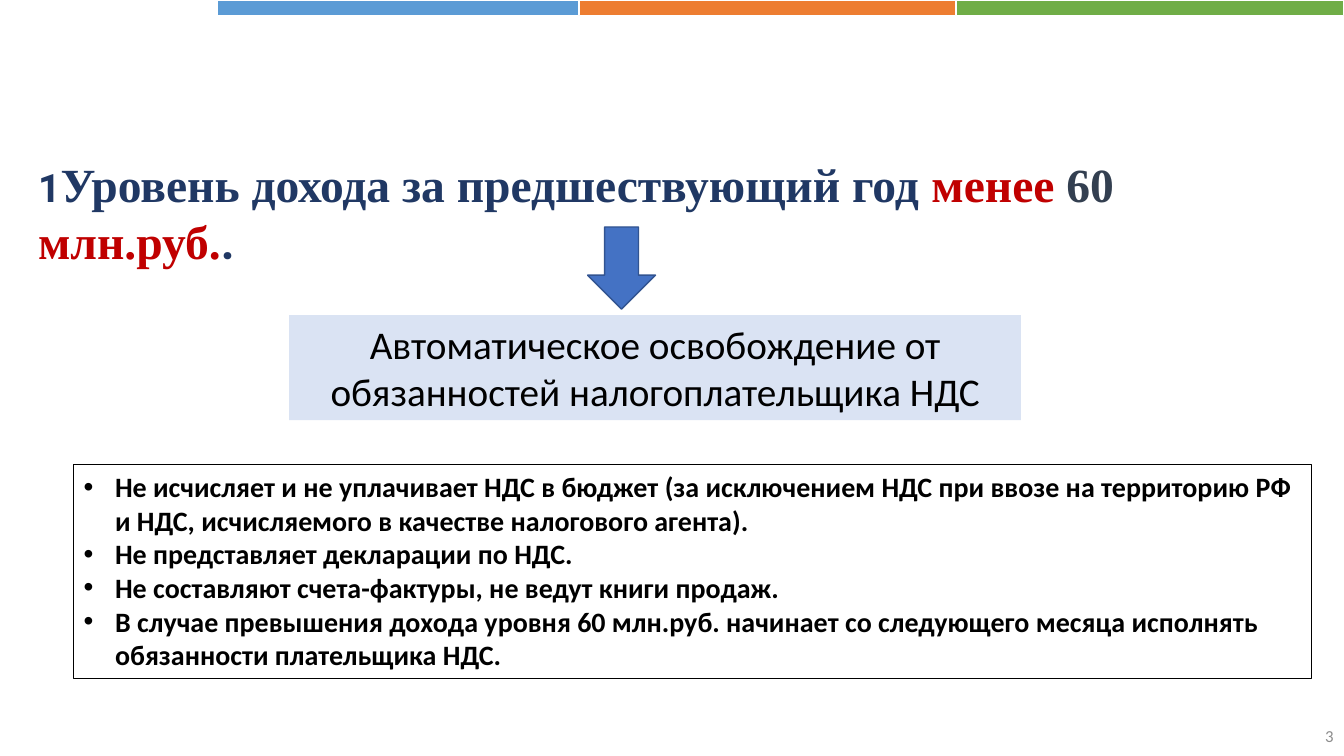
import pptx
import pptx.util
import pptx.dml.color
import pptx.enum.shapes
import pptx.enum.text
import lxml.etree

Cm = pptx.util.Cm
Pt = pptx.util.Pt
Kind = pptx.enum.shapes.MSO_SHAPE
Side = pptx.enum.text.PP_ALIGN
Mid = pptx.enum.text.MSO_ANCHOR


def tint(part, code):
    if hasattr(part, "solid"):
        part.solid()
        part = part.fore_color
    part.rgb = pptx.dml.color.RGBColor.from_string(code)


def write(para, text, size, face, code, bold=False):
    run = para.add_run()
    run.text = text
    run.font.size = Pt(size)
    run.font.name = face
    run.font.bold = bold
    tint(run.font.color, code)


deck = pptx.Presentation()
deck.slide_width = Cm(33.87)
deck.slide_height = Cm(19.05)
slide = deck.slides.add_slide(deck.slide_layouts[6])

shapes = {}
for name, kind, left, top, width, height, fill, edge, weight in [
    ("blue", Kind.RECTANGLE, 5.47, 0, 9.11, 0.4, "5B9BD5", "FFFFFF", 1),
    ("orange", Kind.RECTANGLE, 14.6, 0, 9.49, 0.4, "ED7D31", "FFFFFF", 1),
    ("green", Kind.RECTANGLE, 24.09, 0, 9.77, 0.4, "70AD47", "FFFFFF", 1),
    ("arrow", Kind.DOWN_ARROW, 14.81, 5.72, 1.71, 2.07, "4472C4", "325491", 1),
    ("result", Kind.RECTANGLE, 7.29, 7.94, 18.44, 2.65, "DAE3F3", None, 0),
    ("duties", Kind.RECTANGLE, 1.86, 11.71, 31.2, 5.39, None, "000000", 0.75),
]:
    shape = slide.shapes.add_shape(kind, Cm(left), Cm(top), Cm(width), Cm(height))
    shape.shadow.inherit = False
    if fill:
        tint(shape.fill, fill)
    else:
        shape.fill.background()
    if edge:
        tint(shape.line.fill, edge)
        shape.line.width = Pt(weight)
    else:
        shape.line.fill.background()
    shapes[name] = shape

for name, left, top, width, height in [
    ("title", 0.71, 3.78, 32.7, 1.7),
    ("number", 26.25, 18.05, 7.61, 0.99),
]:
    shapes[name] = slide.shapes.add_textbox(Cm(left), Cm(top), Cm(width), Cm(height))

for name, anchor in [
    ("title", Mid.TOP),
    ("number", Mid.MIDDLE),
    ("result", Mid.TOP),
    ("duties", Mid.TOP),
]:
    frame = shapes[name].text_frame
    frame.word_wrap = True
    frame.vertical_anchor = anchor

para = shapes["title"].text_frame.paragraphs[0]
for text, size, face, code in [
    ("1", 28, "Roboto", "203864"),
    ("Уровень дохода за предшествующий год ", 34, "Times New Roman", "203864"),
    ("менее ", 34, "Times New Roman", "C00000"),
    ("60 ", 34, "Times New Roman", "333F50"),
    ("млн.руб.", 34, "Times New Roman", "C00000"),
    (".", 34, "Roboto", "203864"),
]:
    write(para, text, size, face, code, True)

para = shapes["number"].text_frame.paragraphs[0]
para.alignment = Side.RIGHT
write(para, "3", 12, "Calibri", "8C8C8C")

para = shapes["result"].text_frame.paragraphs[0]
para.alignment = Side.CENTER
write(para, "Автоматическое освобождение от обязанностей налогоплательщика НДС", 28, "Calibri", "000000")

frame = shapes["duties"].text_frame
for i, text in enumerate([
    "Не исчисляет и не уплачивает НДС в бюджет (за исключением НДС при ввозе на территорию РФ и НДС, исчисляемого в качестве налогового агента).",
    "Не представляет декларации по НДС.",
    "Не составляют счета-фактуры, не ведут книги продаж.",
    "В случае превышения дохода уровня 60 млн.руб. начинает со следующего месяца исполнять обязанности плательщика НДС.",
]):
    para = frame.add_paragraph() if i else frame.paragraphs[0]
    para.alignment = Side.LEFT
    props = para._p.get_or_add_pPr()
    props.set("marL", str(Cm(0.79)))
    props.set("indent", str(-Cm(0.79)))
    for tag, key, value in [("buFont", "typeface", "Arial"), ("buChar", "char", "•")]:
        mark = lxml.etree.SubElement(props, pptx.oxml.ns.qn("a:" + tag))
        mark.set(key, value)
    write(para, text, 20, "Calibri", "000000", True)

deck.save("out.pptx")
